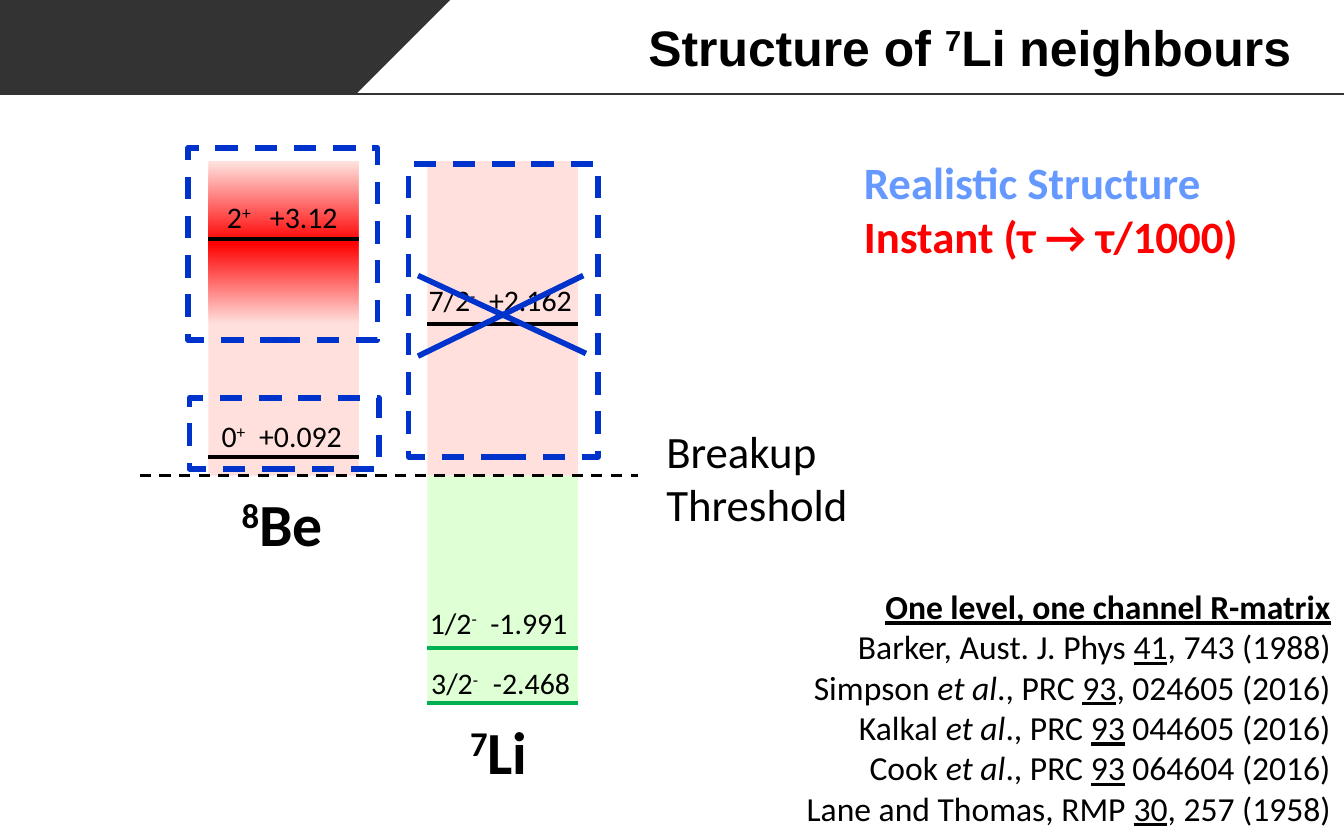
from dataclasses import dataclass

from lxml.etree import SubElement
from pptx import Presentation
from pptx.dml.color import RGBColor as RGB
from pptx.enum.dml import MSO_LINE as Dash
from pptx.enum.shapes import MSO_CONNECTOR as Conn, MSO_SHAPE as Shape
from pptx.enum.text import MSO_ANCHOR as Anchor, MSO_AUTO_SIZE as Auto, PP_ALIGN as Align
from pptx.oxml import parse_xml
from pptx.oxml.ns import nsdecls, qn
from pptx.util import Emu, Pt

PX = 9144  # EMU per px, 100 px to the inch


@dataclass(frozen=True)
class Theme:
    head_font: str = "Arial"
    font: str = "Calibri"
    title: float = 26.7
    symbol: int = 32
    large: int = 24
    refs: int = 18
    label: int = 16
    black: str = "000000"
    banner: str = "333333"
    unbound: str = "FFE0DD"
    bound: str = "DFFFD5"
    bound_line: str = "00B050"
    resonance: str = "FF0000"
    mark: str = "0033CC"
    realistic: str = "6699FF"


T = Theme()


def px(*values):
    return [Emu(v * PX) for v in values]


def rgb(color):
    return RGB.from_string(color)


def add_box(shapes, box, fill=None, line=None, kind=Shape.RECTANGLE):
    sp = shapes.add_shape(kind, *px(*box))
    sp.shadow.inherit = False
    if fill:
        sp.fill.solid()
        sp.fill.fore_color.rgb = rgb(fill)
    else:
        sp.fill.background()
    if line:
        sp.line.color.rgb = rgb(line)
        sp.line.width = Pt(3)
        sp.line.dash_style = Dash.DASH
    else:
        sp.line.fill.background()
    return sp


def add_line(shapes, ends, color, width, dash=None):
    ln = shapes.add_connector(Conn.STRAIGHT, *px(*ends))
    ln.line.color.rgb = rgb(color)
    ln.line.width = Pt(width)
    if dash:
        ln.line.dash_style = dash
    SubElement(ln._element.spPr, qn("a:effectLst"))


def add_runs(p, runs, size, color=T.black, font=T.font):
    """Each run is (text, flags): b bold, i italic, u underline, ^ superscript."""
    for text, flags in runs:
        r = p.add_run()
        r.text = text
        r.font.name, r.font.size = font, Pt(size)
        r.font.color.rgb = rgb(color)
        r.font.bold, r.font.italic = "b" in flags, "i" in flags
        r.font.underline = "u" in flags
        if "^" in flags:
            r._r.get_or_add_rPr().set("baseline", "30000")


def add_text(shapes, box, lines, size, colors=(T.black,), align=Align.LEFT, tab=None):
    tf = shapes.add_textbox(*px(*box)).text_frame
    tf.word_wrap = True
    for i, runs in enumerate(lines):
        p = tf.add_paragraph() if i else tf.paragraphs[0]
        p.alignment = align
        if tab:
            tabs = SubElement(p._p.get_or_add_pPr(), qn("a:tabLst"))
            SubElement(tabs, qn("a:tab"), pos=str(tab * PX), algn="l")
        add_runs(p, runs, size, colors[i % len(colors)])


def header(s, box):
    x, y, w, h = box
    # Banner with slanted end, and rule
    add_box(s.shapes, (x, y, 266, h), T.banner)
    add_box(s.shapes, (x + 265, y, h, h), T.banner, kind=Shape.RIGHT_TRIANGLE).rotation = 90
    add_line(s.shapes, (x, y + h, x + w, y + h), T.banner, 1.5)
    # Title
    title = s.shapes.title
    title.left, title.top, title.width, title.height = px(x + 267, y, w - 267, h - 1)
    tf = title.text_frame
    tf.auto_size, tf.vertical_anchor = Auto.NONE, Anchor.MIDDLE
    tf.margin_left, tf.margin_top, tf.margin_right, tf.margin_bottom = px(10, 5, 39, 5)
    p = tf.paragraphs[0]
    p.alignment = Align.RIGHT
    add_runs(p, [("Structure of ", "b"), ("7", "b^"), ("Li neighbours", "b")],
             T.title, font=T.head_font)


def resonance(shapes, box):
    sp = add_box(shapes, box, T.resonance)
    stops = "".join(
        f'<a:gs pos="{pos}"><a:srgbClr val="{T.resonance}"><a:alpha val="{alpha}"/></a:srgbClr></a:gs>'
        for pos, alpha in ((0, 0), (50000, 100000), (100000, 0)))
    grad = parse_xml(f'<a:gradFill {nsdecls("a")} rotWithShape="1"><a:gsLst>{stops}</a:gsLst>'
                     '<a:lin ang="5400000" scaled="0"/></a:gradFill>')
    solid = sp._element.spPr.find(qn("a:solidFill"))
    solid.getparent().replace(solid, grad)


def nuclide(s, box, threshold, mass, element, symbol_at, levels, broad=None):
    x, y, w, h = box
    # Unbound and bound energy ranges
    add_box(s.shapes, (x, y, w, threshold), T.unbound)
    if h > threshold:
        add_box(s.shapes, (x, y + threshold, w, h - threshold), T.bound)
    if broad:
        resonance(s.shapes, (x, y + broad[0], w, broad[1]))
    # Levels with spin, parity and energy
    for level_y, spin, parity, energy, dx, rise, tab in levels:
        color = T.bound_line if level_y > threshold else T.black
        add_line(s.shapes, (x, y + level_y, x + w, y + level_y), color, 2.25)
        add_text(s.shapes, (x + dx, y + level_y - rise, 132, 37),
                 [[(spin, ""), (parity, "^"), ("\t" + energy, "")]], T.label, tab=tab)
    # Symbol
    dx, dy = symbol_at
    add_text(s.shapes, (x + dx, y + dy, 95, 64), [[(mass, "b^"), (element, "b")]], T.symbol)


def level_scheme(s, box):
    x, y, w, h = box
    threshold = 234
    nuclide(s, (x + 51, y, 112, threshold), threshold, "8", "Be", (15, 237),
            [(58, "2", "+", "+3.12", 4, 35, 32), (220, "0", "+", "+0.092", 0, 34, 28)],
            broad=(2, 118))
    nuclide(s, (x + 214, y, 112, h), threshold, "7", "Li", (22, 407),
            [(121, "7/2", "-", "+2.162", -9, 36, 45),
             (362, "1/2", "-", "-1.991", -8, 37, 45),
             (403, "3/2", "-", "-2.468", -7, 33, 46)])
    # Breakup threshold
    add_line(s.shapes, (x, y + threshold, x + w, y + threshold), T.black, 1.5, Dash.DASH)
    add_text(s.shapes, (x + w + 11, y + 190, 170, 91),
             [[("Breakup", "")], [("Threshold", "")]], T.large)
    # Dashed frames
    frames = s.shapes.add_group_shape().shapes
    for dx, dy, fw, fh in ((200, 2, 141, 218), (37, 176, 141, 53), (36, -10, 141, 143)):
        add_box(frames, (x + dx, y + dy, fw, fh), line=T.mark)
    # Cross over the excluded level
    cross = s.shapes.add_group_shape().shapes
    for x1, y1, x2, y2 in ((207, 85, 332, 143), (207, 145, 330, 85)):
        add_line(cross, (x + x1, y + y1, x + x2, y + y2), T.mark, 3)


def legend(s, box):
    add_text(s.shapes, box, [[("Realistic Structure", "b")], [("Instant (τ → τ/1000)", "b")]],
             T.large, (T.realistic, T.resonance))


def references(s, box):
    entries = [("Barker, Aust. J. Phys ", "41", ", 743 (1988)"),
               ("Simpson |., PRC ", "93", ", 024605 (2016)"),
               ("Kalkal |., PRC ", "93", " 044605 (2016)"),
               ("Cook |., PRC ", "93", " 064604 (2016)"),
               ("Lane and Thomas, RMP ", "30", ", 257 (1958)")]
    lines = [[("One level, one channel R-matrix", "bu")]]
    for source, volume, rest in entries:
        authors, others, journal = source.partition("|")
        runs = [(authors, "")]
        if others:
            runs += [("et al", "i"), (journal, "")]
        lines.append(runs + [(volume, "u"), (rest, "")])
    add_text(s.shapes, box, lines, T.refs, align=Align.RIGHT)


def main():
    prs = Presentation()
    prs.slide_width, prs.slide_height = px(1000, 625)
    s = prs.slides.add_slide(prs.slide_layouts[5])
    header(s, (0, 0, 1000, 70))
    level_scheme(s, (104, 120, 371, 403))
    legend(s, (633, 110, 320, 91))
    references(s, (570, 431, 430, 192))
    prs.save("out.pptx")


if __name__ == "__main__":
    main()
